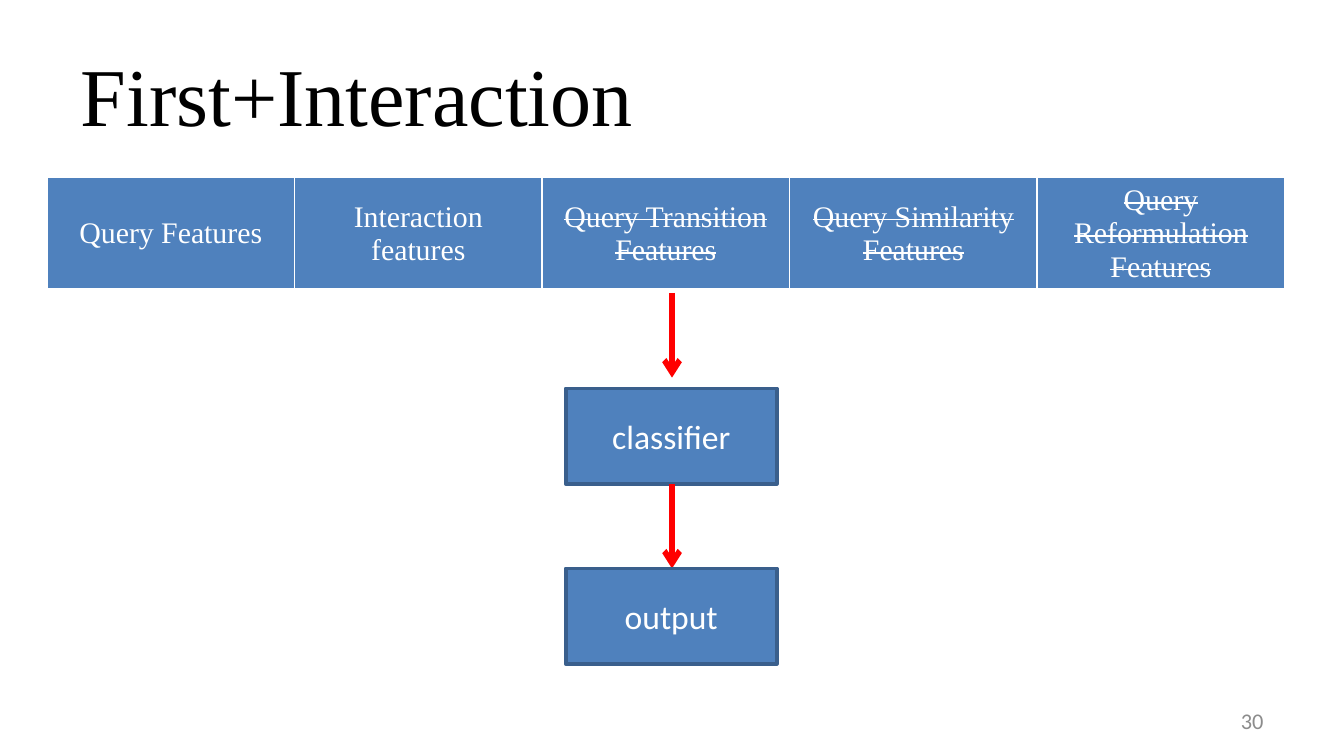
import dataclasses

import lxml.etree
import pptx
import pptx.dml.color
import pptx.enum.shapes
import pptx.enum.text
import pptx.oxml
import pptx.oxml.ns
import pptx.util

Inches = pptx.util.Inches
Align = pptx.enum.text.PP_ALIGN


@dataclasses.dataclass(frozen=True)
class Theme:
    serif: str = "Times New Roman"
    sans: str = "Calibri"
    black: str = "000000"
    white: str = "FFFFFF"
    gray: str = "8C8C8C"
    blue: str = "4F81BD"
    outline: str = "3A5F8C"
    red: str = "FF0000"
    title_size: int = 44
    box_size: int = 18
    table_size: int = 16
    number_size: int = 12


THEME = Theme()


def rgb(value):
    return pptx.dml.color.RGBColor.from_string(value)


def write_text(text_frame, text, name, size, color, alignment):
    """Put one formatted paragraph in a text frame and return it."""
    text_frame.word_wrap = True
    text_frame.vertical_anchor = pptx.enum.text.MSO_ANCHOR.MIDDLE
    paragraph = text_frame.paragraphs[0]
    paragraph.alignment = alignment
    run = paragraph.add_run()
    run.text = text
    formats = {"name": name, "size": pptx.util.Pt(size), "bold": False}
    for attribute, value in formats.items():
        setattr(run.font, attribute, value)
    run.font.color.rgb = rgb(color)
    return paragraph


def place_title(slide, text):
    title = slide.shapes.title
    position = {"left": 0.5, "top": 0.23, "width": 9, "height": 0.94}
    for attribute, value in position.items():
        setattr(title, attribute, Inches(value))
    paragraph = write_text(title.text_frame, text, THEME.serif,
                           THEME.title_size, THEME.black, Align.LEFT)
    # Hanging indent
    properties = paragraph._p.get_or_add_pPr()
    properties.set("marL", str(Inches(0.56)))
    properties.set("indent", str(Inches(-0.56)))


def add_slide_number(slide, text):
    box = slide.shapes.add_textbox(Inches(7.17), Inches(5.21),
                                   Inches(2.33), Inches(0.3))
    write_text(box.text_frame, text, THEME.sans, THEME.number_size,
               THEME.gray, Align.RIGHT)


def set_borders(cell):
    properties = cell._tc.get_or_add_tcPr()
    widths = {"lnL": 1, "lnR": 1, "lnT": 1, "lnB": 3}
    for index, (side, width) in enumerate(widths.items()):
        border = pptx.oxml.parse_xml(
            f'<a:{side} {pptx.oxml.ns.nsdecls("a")} w="{pptx.util.Pt(width)}">'
            f'<a:solidFill><a:srgbClr val="{THEME.white}"/></a:solidFill>'
            f'</a:{side}>')
        properties.insert(index, border)


def add_feature_table(slide, features):
    """Draw a one-row table; unused features are struck through."""
    frame = slide.shapes.add_table(1, len(features), Inches(0.35),
                                   Inches(1.32), Inches(9.21), Inches(0.41))
    # The row grows to fit three lines of text
    frame.height = Inches(0.9)
    table = frame.table
    table.first_row = False
    table.horz_banding = False
    cell_formats = {
        "vertical_anchor": pptx.enum.text.MSO_ANCHOR.MIDDLE,
        "margin_top": Inches(0.02),
        "margin_bottom": Inches(0.02),
    }
    for cell, (text, used) in zip(table.rows[0].cells, features):
        for attribute, value in cell_formats.items():
            setattr(cell, attribute, value)
        cell.fill.solid()
        cell.fill.fore_color.rgb = rgb(THEME.blue)
        set_borders(cell)
        paragraph = write_text(cell.text_frame, text, THEME.serif,
                               THEME.table_size, THEME.white, Align.CENTER)
        if not used:
            run = paragraph.runs[0]
            run._r.get_or_add_rPr().set("strike", "sngStrike")


def add_box(slide, text, top):
    box = slide.shapes.add_shape(pptx.enum.shapes.MSO_SHAPE.RECTANGLE,
                                 Inches(4.21), Inches(top),
                                 Inches(1.57), Inches(0.71))
    box.shadow.inherit = False
    box.fill.solid()
    box.fill.fore_color.rgb = rgb(THEME.blue)
    box.line.color.rgb = rgb(THEME.outline)
    box.line.width = pptx.util.Pt(2)
    write_text(box.text_frame, text, THEME.sans, THEME.box_size,
               THEME.white, Align.CENTER)


def add_down_arrow(slide, top):
    arrow = slide.shapes.add_connector(
        pptx.enum.shapes.MSO_CONNECTOR.STRAIGHT,
        Inches(5), Inches(top), Inches(5), Inches(top + 0.63))
    arrow.line.color.rgb = rgb(THEME.red)
    arrow.line.width = pptx.util.Pt(3)
    qn = pptx.oxml.ns.qn
    line = arrow.line._get_or_add_ln()
    lxml.etree.SubElement(line, qn("a:tailEnd"), type="arrow")
    lxml.etree.SubElement(arrow._element.spPr, qn("a:effectLst"))


def main():
    presentation = pptx.Presentation()
    # Widescreen, 16:9
    presentation.slide_width = Inches(10)
    presentation.slide_height = Inches(10) * 9 // 16
    slide = presentation.slides.add_slide(presentation.slide_layouts[5])

    # Heading and page number
    place_title(slide, "First+Interaction")
    add_slide_number(slide, "30")

    # Features, with whether each one is used
    add_feature_table(slide, [
        ("Query Features", True),
        ("Interaction features", True),
        ("Query Transition Features", False),
        ("Query Similarity Features", False),
        ("Query Reformulation Features", False),
    ])

    # Flow from the features to the output
    for text, arrow_top, box_top in [("classifier", 2.18, 2.89),
                                     ("output", 3.6, 4.23)]:
        add_down_arrow(slide, arrow_top)
        add_box(slide, text, box_top)

    presentation.save("out.pptx")


if __name__ == "__main__":
    main()
